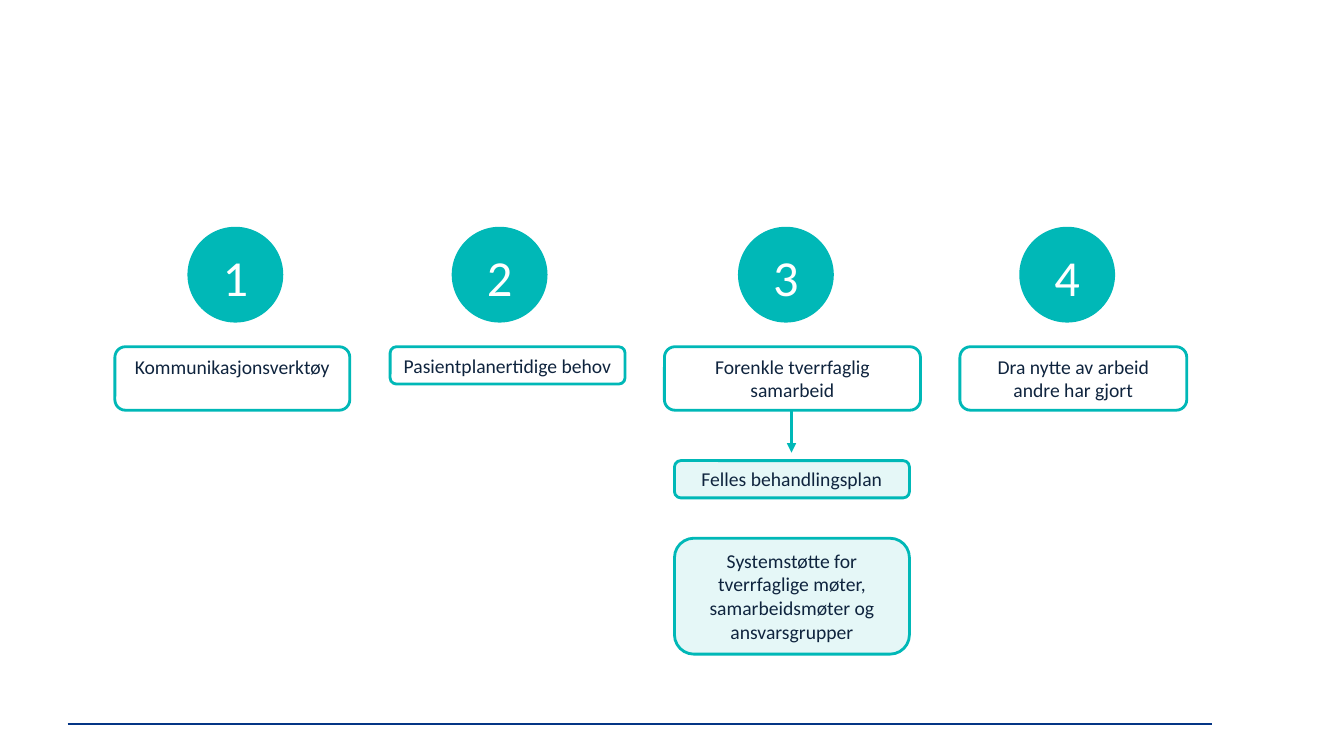
from lxml import etree
from pptx import Presentation
from pptx.dml.color import RGBColor
from pptx.enum.shapes import MSO_CONNECTOR, MSO_SHAPE
from pptx.enum.text import MSO_ANCHOR, PP_ALIGN
from pptx.oxml.ns import qn
from pptx.util import Inches, Pt

ROUNDED, OVAL = MSO_SHAPE.ROUNDED_RECTANGLE, MSO_SHAPE.OVAL
STRAIGHT = MSO_CONNECTOR.STRAIGHT
CENTER, TOP = PP_ALIGN.CENTER, MSO_ANCHOR.TOP

TEAL = RGBColor(0x00, 0xB8, 0xB7)
NAVY = RGBColor(0x04, 0x35, 0x85)
INK = RGBColor(0x0F, 0x24, 0x3E)
WHITE = RGBColor(0xFF, 0xFF, 0xFF)

WIDTH, HEIGHT = Inches(13.33), Inches(7.5)
COL, ROW = WIDTH / 100, HEIGHT / 100
FONT = "Calibri"

CIRCLE_TOP, CIRCLE_W, CIRCLE_H = 30, 7.13, 12.67
NUMBER_TOP, NUMBER_H, NUMBER_MARGIN = 31.87, 9.47, 0.15
BOX_TOP, BOX_W = 45.87, 17.48
ONE_LINE, TWO_LINES, FOUR_LINES = 4.93, 8.4, 15.33
DETAIL_LEFT = 50.19

STEPS = [
    ("Kommunikasjonsverktøy", 13.95, 8.55, BOX_W, TWO_LINES),
    ("Pasientplanertidige behov", 33.61, 29.03, BOX_W, ONE_LINE),
    ("Forenkle tverrfaglig samarbeid", 54.91, 49.44, 19.05, TWO_LINES),
    ("Dra nytte av arbeid andre har gjort", 75.84, 71.42, 16.88, TWO_LINES),
]
DETAILS = [
    ("Felles behandlingsplan", 60.93, ONE_LINE),
    ("Systemstøtte for tverrfaglige møter, samarbeidsmøter og ansvarsgrupper",
     71.2, FOUR_LINES),
]


def grid(left, top, width, height):
    return int(left * COL), int(top * ROW), int(width * COL), int(height * ROW)


def set_text(sp, text, size, color):
    tf = sp.text_frame
    tf.word_wrap = True
    tf.vertical_anchor = TOP
    p = tf.paragraphs[0]
    p.text = text
    p.alignment = CENTER
    font = p.runs[0].font
    font.name, font.size = FONT, Pt(size)
    font.color.rgb = color


def add_filled(slide, kind, area, color):
    sp = slide.shapes.add_shape(kind, *grid(*area))
    sp.shadow.inherit = False
    sp.fill.solid()
    sp.fill.fore_color.rgb = color
    return sp


def add_box(slide, text, area, tinted=False):
    sp = add_filled(slide, ROUNDED, area, TEAL if tinted else WHITE)
    if tinted:
        color = sp._element.spPr.find(qn("a:solidFill")).find(qn("a:srgbClr"))
        etree.SubElement(color, qn("a:alpha"), val="10000")
    sp.line.color.rgb = TEAL
    sp.line.width = Pt(2)
    set_text(sp, text, 14, INK)


def add_number(slide, number, left):
    sp = add_filled(slide, OVAL, (left, CIRCLE_TOP, CIRCLE_W, CIRCLE_H), TEAL)
    sp.line.fill.background()
    area = (left - NUMBER_MARGIN, NUMBER_TOP, CIRCLE_W + 2 * NUMBER_MARGIN, NUMBER_H)
    label = slide.shapes.add_textbox(*grid(*area))
    set_text(label, str(number), 36, WHITE)


def add_line(slide, start, end, color, width, arrow=False):
    line = slide.shapes.add_connector(STRAIGHT, *grid(*start, *end))
    line.line.color.rgb = color
    line.line.width = Pt(width)
    if arrow:
        etree.SubElement(line.line._get_or_add_ln(), qn("a:tailEnd"), type="triangle")
    etree.SubElement(line._element.spPr, qn("a:effectLst"))


def main():
    prs = Presentation()
    prs.slide_width, prs.slide_height = WIDTH, HEIGHT
    slide = prs.slides.add_slide(prs.slide_layouts[6])

    add_line(slide, (5.03, 95.73), (90.17, 95.73), NAVY, 1.25)
    for number, (text, circle_left, left, width, height) in enumerate(STEPS, 1):
        add_box(slide, text, (left, BOX_TOP, width, height))
        add_number(slide, number, circle_left)
    add_line(slide, (58.89, BOX_TOP + TWO_LINES), (58.89, 59.87), TEAL, 2.25, arrow=True)
    for text, top, height in DETAILS:
        add_box(slide, text, (DETAIL_LEFT, top, BOX_W, height), tinted=True)

    prs.save("out.pptx")


if __name__ == "__main__":
    main()
